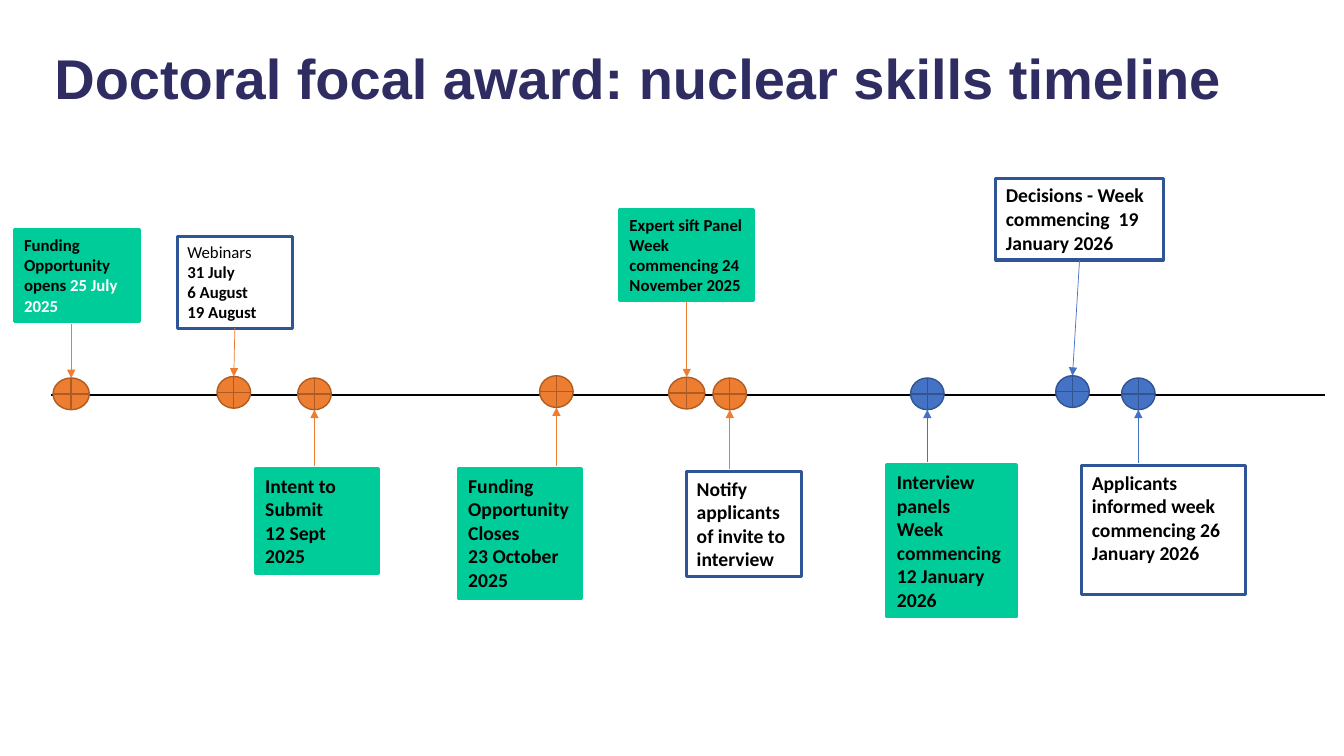
from lxml import etree
from pptx import Presentation
from pptx.dml.color import RGBColor
from pptx.enum.shapes import MSO_CONNECTOR, MSO_SHAPE
from pptx.enum.text import MSO_ANCHOR, MSO_AUTO_SIZE, PP_ALIGN
from pptx.oxml.ns import qn
from pptx.util import Inches, Pt

RECT, MARKER, STRAIGHT = MSO_SHAPE.RECTANGLE, MSO_SHAPE.FLOWCHART_OR, MSO_CONNECTOR.STRAIGHT
TOP, LEFT, NO_FIT = MSO_ANCHOR.TOP, PP_ALIGN.LEFT, MSO_AUTO_SIZE.NONE
BOX_BOTTOM = 2

# Content: each paragraph is a list of (text, text style)
TITLE = "Doctoral focal award: nuclear skills timeline"

# All lengths are percentages of the slide's width or height
# paragraphs, box style, type size, box (left, top, width, height),
# phase, marker centre (x, y), marker width, arrow leaves the box's middle
EVENTS = [
    ([[("Funding Opportunity opens ", "strong"), ("25 July 2025", "light")]],
     "filled", "small", (1.05, 30.4, 9.3, 12.1), "apply", (5.3, 52.1), 2.7, False),
    ([[("Webinars", "plain")], [("31 July", "strong")],
      [("6 August", "strong")], [("19 August", "strong")]],
     "outlined", "small", (13.2, 31.3, 8.55, 12.1), "apply", (17.4, 51.9), 2.5, True),
    ([[("Intent to Submit", "strong")], [("12 Sept 2025", "strong")]],
     "filled", "body", (19, 62, 9.15, 13.9), "apply", (23.4, 52.1), 2.5, False),
    ([[("Funding Opportunity Closes", "strong")], [("23 October", "strong")],
      [("2025", "strong")]],
     "filled", "body", (34.1, 62, 9.15, 17.1), "apply", (41.4, 51.8), 2.5, False),
    ([[("Expert sift Panel", "strong")], [("Week commencing 24 November 2025", "strong")]],
     "filled", "small", (46.1, 27.7, 10, 12.1), "apply", (51.1, 52), 2.7, True),
    ([[("Notify applicants of invite to interview", "strong")]],
     "outlined", "body", (51.1, 62.4, 8.55, 13.9), "apply", (54.3, 52.1), 2.5, False),
    ([[("Interview panels", "strong")], [("Week commencing 12 January 2026", "strong")]],
     "filled", "body", (66, 61.5, 9.6, 20.1), "decide", (69, 52.1), 2.5, False),
    ([[("Decisions - Week commencing  19 January 2026", "strong")]],
     "outlined", "body", (74.1, 23.6, 12.45, 10.8), "decide", (79.8, 51.8), 2.5, True),
    ([[("Applicants informed week commencing 26 January 2026", "strong")]],
     "outlined", "body", (80.5, 61.6, 12.15, 17.1), "decide", (84.7, 52.1), 2.5, False),
]
TITLE_AREA = (3.3, 5.1, 92.3, 10.3)
AXIS = (3.8, 52.2, 98.55, 52.2)
MARKER_HEIGHT = 4.2
ARROW_GAP = 0.4

THEME = {
    "title": {"name": "Arial", "size": Pt(40), "bold": True, "color": "2E2C61"},
    "text": {
        "plain": {"name": "Calibri", "bold": False, "color": "000000"},
        "strong": {"name": "Calibri", "bold": True, "color": "000000"},
        "light": {"name": "Calibri", "bold": True, "color": "FFFFFF"},
    },
    "size": {"small": Pt(12), "body": Pt(14)},
    # fill, line, line width
    "box": {"filled": ("00CC99", "00CC99", 2.25), "outlined": (None, "2F5597", 2.25)},
    "phase": {"apply": ("ED7D31", "AF5C24", 1), "decide": ("4472C4", "325491", 1)},
    "axis": ("000000", 1.5),
    "arrow_width": 0.5,
}

prs = Presentation()
prs.slide_width, prs.slide_height = Inches(13.33), Inches(7.5)
slide = prs.slides.add_slide(prs.slide_layouts[5])


def across(share):
    return round(prs.slide_width * share / 100)


def down(share):
    return round(prs.slide_height * share / 100)


def place(left, top, width, height):
    return across(left), down(top), across(width), down(height)


def style_font(font, formats):
    for key, value in formats.items():
        if key == "color":
            font.color.rgb = RGBColor.from_string(value)
        else:
            setattr(font, key, value)


def style_frame(frame):
    for key, value in {"word_wrap": True, "auto_size": NO_FIT, "vertical_anchor": TOP}.items():
        setattr(frame, key, value)


def add_styled_shape(kind, area, style):
    fill, line, width = style
    shape = slide.shapes.add_shape(kind, *place(*area))
    shape.shadow.inherit = False
    if fill:
        shape.fill.solid()
        shape.fill.fore_color.rgb = RGBColor.from_string(fill)
    else:
        shape.fill.background()
    shape.line.color.rgb = RGBColor.from_string(line)
    shape.line.width = Pt(width)
    return shape


def add_line(x1, y1, x2, y2, color, width, arrow=False):
    line = slide.shapes.add_connector(STRAIGHT, across(x1), down(y1), across(x2), down(y2))
    line.line.color.rgb = RGBColor.from_string(color)
    line.line.width = Pt(width)
    if arrow:
        etree.SubElement(line.line._get_or_add_ln(), qn("a:tailEnd"), type="triangle")
    etree.SubElement(line._element.spPr, qn("a:effectLst"))
    return line


# Title
title = slide.shapes.title
title.left, title.top, title.width, title.height = place(*TITLE_AREA)
style_frame(title.text_frame)
title.text_frame.text = TITLE
heading = title.text_frame.paragraphs[0]
heading.alignment = LEFT
style_font(heading.runs[0].font, THEME["title"])

# Time axis
add_line(*AXIS, *THEME["axis"])

# Events: box, arrow to the axis, marker
for paragraphs, box_style, size, area, phase, (x, y), marker_width, centred in EVENTS:
    box = add_styled_shape(RECT, area, THEME["box"][box_style])
    frame = box.text_frame
    style_frame(frame)
    for index, runs in enumerate(paragraphs):
        paragraph = frame.add_paragraph() if index else frame.paragraphs[0]
        paragraph.alignment = LEFT
        for text, text_style in runs:
            run = paragraph.add_run()
            run.text = text
            style_font(run.font, {**THEME["text"][text_style], "size": THEME["size"][size]})

    left, top, width, height = area
    above = top < y
    start = top + height + ARROW_GAP if above else top - ARROW_GAP
    end = y - MARKER_HEIGHT / 2 if above else y + MARKER_HEIGHT / 2
    phase_style = THEME["phase"][phase]
    arrow = add_line(x, start, x, end, phase_style[0], THEME["arrow_width"], arrow=True)
    if centred:
        arrow.begin_connect(box, BOX_BOTTOM)

    marker_area = (x - marker_width / 2, y - MARKER_HEIGHT / 2, marker_width, MARKER_HEIGHT)
    add_styled_shape(MARKER, marker_area, phase_style)

prs.save("out.pptx")
